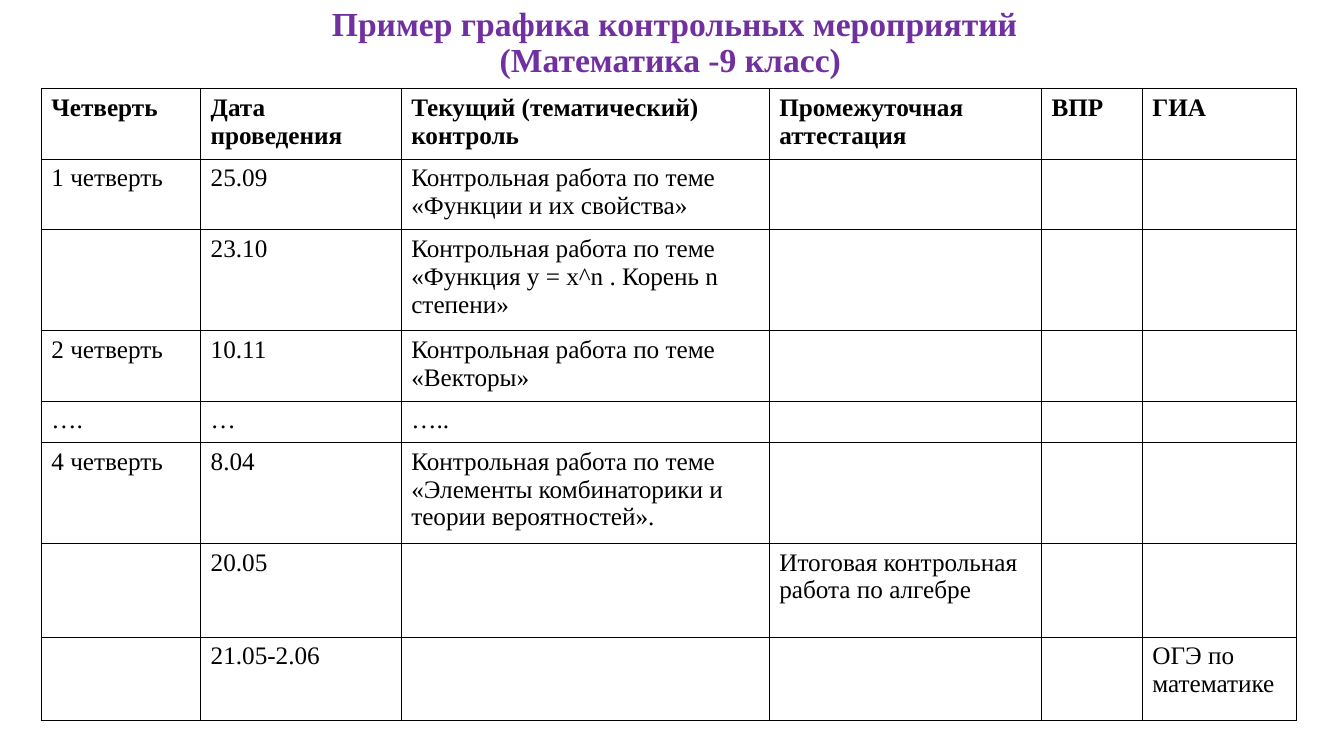
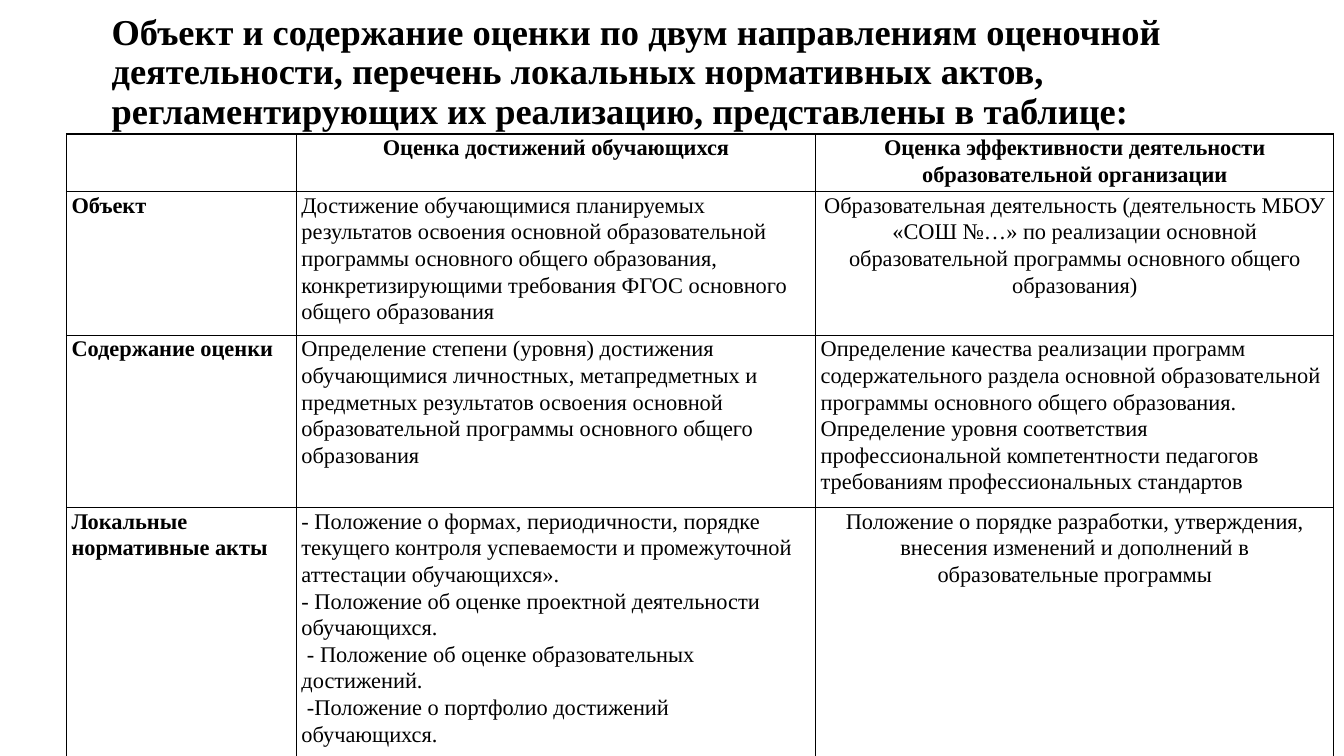
from lxml import etree
from pptx import Presentation
from pptx import util as u
from pptx.dml.color import RGBColor
from pptx.enum import text as t
from pptx.oxml.ns import qn

FONT = "Times New Roman"
BLACK, PURPLE = "000000", "7030A0"
LEFT, CENTER, JUSTIFY = t.PP_ALIGN.LEFT, t.PP_ALIGN.CENTER, t.PP_ALIGN.JUSTIFY
TITLE_WIDTH = 11.5


def color(value):
    return RGBColor.from_string(value)


def write(frame, content, size=18, bold=False, fill=BLACK, align=LEFT,
          spacing=None, after=None):
    """Fill a text frame; each line of a list becomes a paragraph."""
    lines = content if isinstance(content, list) else [content]
    frame.word_wrap = True
    for number, line in enumerate(lines):
        paragraph = frame.add_paragraph() if number else frame.paragraphs[0]
        paragraph.alignment = align
        if spacing:
            paragraph.line_spacing = spacing
        if after:
            paragraph.space_after = u.Pt(after)
        for part_number, part in enumerate(line.split("\n")):
            if part_number:
                paragraph.add_line_break()
            run = paragraph.add_run()
            run.text = part
            run.font.name = FONT
            run.font.size = u.Pt(size)
            run.font.bold = bold
            run.font.color.rgb = color(fill)


def add_title(slide, box, content, **style):
    shape = slide.shapes.add_textbox(*map(u.Inches, box))
    shape.text_frame.vertical_anchor = t.MSO_ANCHOR.MIDDLE
    write(shape.text_frame, content, bold=True, spacing=0.9, **style)


def add_borders(cell):
    properties = cell._tc.get_or_add_tcPr()
    for position, side in enumerate(("lnL", "lnR", "lnT", "lnB")):
        line = etree.Element(qn(f"a:{side}"), w=str(u.Pt(1)))
        fill = etree.SubElement(line, qn("a:solidFill"))
        etree.SubElement(fill, qn("a:srgbClr"), val=BLACK)
        properties.insert(position, line)


def add_grid(slide, corner, widths, heights, rows, style_of, insets=None):
    """Draw a ruled table; style_of(row, column) gives the text format."""
    left, top = corner
    size = (left, top, sum(widths), sum(heights))
    table = slide.shapes.add_table(
        len(rows), len(widths), *map(u.Inches, size)).table
    table.first_row = table.horz_banding = False
    for column, width in zip(table.columns, widths):
        column.width = u.Inches(width)
    for row, height in zip(table.rows, heights):
        row.height = u.Inches(height)
    for r, row in enumerate(rows):
        for c, content in enumerate(row):
            cell = table.cell(r, c)
            cell.fill.background()
            add_borders(cell)
            if insets:
                cell.margin_left = cell.margin_right = u.Inches(insets[0])
                cell.margin_top = cell.margin_bottom = u.Inches(insets[1])
            write(cell.text_frame, content, **style_of(r, c))


def schedule_slide(slide):
    add_title(slide, (0.94, 0.15, TITLE_WIDTH, 0.57),
              "Пример графика контрольных мероприятий\n(Математика -9 класс) ",
              size=24, fill=PURPLE, align=CENTER)
    topic = "Контрольная работа по теме "
    rows = [
        ["Четверть", "Дата проведения", "Текущий (тематический) контроль",
         "Промежуточная аттестация", "ВПР", "ГИА"],
        ["1 четверть", "25.09", topic + "«Функции и их свойства»", "", "", ""],
        ["", "23.10", topic + "«Функция у = х^n . Корень n степени»", "", "", ""],
        ["2 четверть", "10.11", topic + "«Векторы»", "", "", ""],
        ["….", "…", "…..", "", "", ""],
        ["4 четверть", "8.04",
         topic + "«Элементы комбинаторики и теории вероятностей».", "", "", ""],
        ["", "20.05", "", "Итоговая контрольная работа по алгебре", "", ""],
        ["", "21.05-2.06", "", "", "", "ОГЭ по математике"],
    ]
    one, two, three = 0.41, 0.65, 0.93  # row heights by lines of text
    add_grid(slide, (0.41, 0.88), (1.58, 1.99, 3.65, 2.7, 1, 1.53),
             (two, two, three, two, one, three, three, 0.83), rows,
             lambda r, c: {"bold": r == 0})


def assessment_style(row, column):
    heading = row == 0 or column == 0
    if row == 0 or (column == 2 and row != 2):
        align = CENTER
    else:
        align = LEFT if column else JUSTIFY
    return {"size": 16, "bold": heading, "align": align,
            "spacing": 1.07, "after": 8 if heading else None}


def assessment_slide(slide):
    add_title(slide, (1.01, 0, TITLE_WIDTH, 1.45),
              "Объект и содержание оценки по двум направлениям оценочной "
              "деятельности, перечень локальных нормативных актов, "
              "регламентирующих их реализацию, представлены в таблице:", size=26)
    rows = [
        ["", "Оценка достижений обучающихся",
         "Оценка эффективности деятельности образовательной организации"],
        ["Объект",
         "Достижение обучающимися планируемых результатов освоения основной "
         "образовательной программы основного общего образования, "
         "конкретизирующими требования ФГОС основного общего образования",
         "Образовательная деятельность (деятельность МБОУ «СОШ №…» по "
         "реализации основной образовательной программы основного общего "
         "образования)"],
        ["Содержание оценки",
         "Определение степени (уровня) достижения обучающимися личностных, "
         "метапредметных и предметных результатов освоения основной "
         "образовательной программы основного общего образования",
         "Определение качества реализации программ содержательного раздела "
         "основной образовательной программы основного общего образования. "
         "Определение уровня соответствия профессиональной компетентности "
         "педагогов требованиям профессиональных стандартов"],
        ["Локальные нормативные акты",
         ["- Положение о формах, периодичности, порядке текущего контроля "
          "успеваемости и промежуточной аттестации обучающихся».",
          "- Положение об оценке проектной деятельности обучающихся.",
          " - Положение об оценке образовательных достижений.",
          " -Положение о портфолио достижений обучающихся."],
         "Положение о порядке разработки, утверждения, внесения изменений и "
         "дополнений в образовательные программы"],
    ]
    add_grid(slide, (0.66, 1.33), (2.28, 5.15, 5.14), (0.53, 1.42, 1.59, 2.37),
             rows, assessment_style, insets=(0.05, 0))


def main():
    presentation = Presentation()
    presentation.slide_width = u.Inches(13.33)
    presentation.slide_height = u.Inches(7.5)
    blank = presentation.slide_layouts[6]
    for build in (schedule_slide, assessment_slide):
        build(presentation.slides.add_slide(blank))
    presentation.save("out.pptx")


if __name__ == "__main__":
    main()
